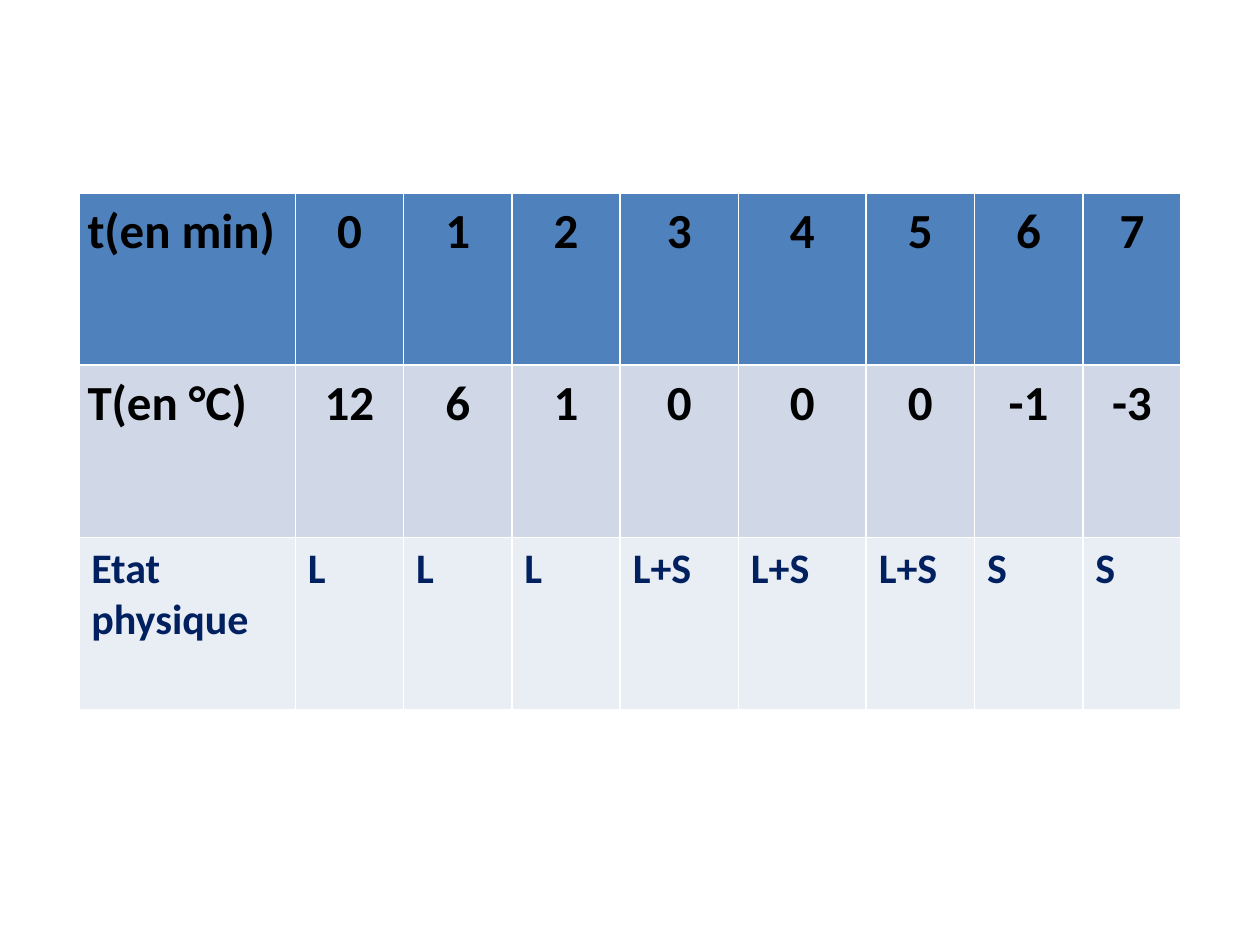
"""Build a slide with a table of temperature and physical state over time."""
import pptx
import pptx.dml.color
import pptx.enum.text
import pptx.util

Pt = pptx.util.Pt
RGBColor = pptx.dml.color.RGBColor
PP_ALIGN = pptx.enum.text.PP_ALIGN

BLACK = RGBColor(0x00, 0x00, 0x00)
NAVY = RGBColor(0x00, 0x20, 0x60)
BLUE = RGBColor(0x4F, 0x81, 0xBD)
BLUE_GREY = RGBColor(0xD0, 0xD8, 0xE8)
PALE_GREY = RGBColor(0xE9, 0xED, 0xF4)

MEASURE = {"size": 28, "color": BLACK, "align": PP_ALIGN.CENTER,
           "spacing": 1.15, "margins": (5, 0)}
STATE = {"size": 24, "color": NAVY, "align": PP_ALIGN.LEFT,
         "spacing": 1.0, "margins": (7.2, 3.6)}
ROWS = [
    (["t(en min)", "0", "1", "2", "3", "4", "5", "6", "7"], BLUE, MEASURE),
    (["T(en °C)", "12", "6", "1", "0", "0", "0", "-1", "-3"], BLUE_GREY, MEASURE),
    (["Etat physique", "L", "L", "L", "L+S", "L+S", "L+S", "S", "S"], PALE_GREY, STATE),
]
COLUMN_WIDTHS = [123.75, 61.9, 61.9, 61.9, 67.5, 73.1, 61.9, 61.9, 56.2]
ROW_HEIGHT = 98.4
LEFT, TOP = 45, 110.25


def format_cell(cell, text, fill, style, align):
    cell.text = text
    cell.fill.solid()
    cell.fill.fore_color.rgb = fill
    side, edge = style["margins"]
    cell.margin_left = cell.margin_right = Pt(side)
    cell.margin_top = cell.margin_bottom = Pt(edge)
    p = cell.text_frame.paragraphs[0]
    p.alignment = align
    p.line_spacing = style["spacing"]
    p.font.name = "Calibri"
    p.font.size = Pt(style["size"])
    p.font.bold = True
    p.font.color.rgb = style["color"]


def main():
    prs = pptx.Presentation()
    prs.slide_width, prs.slide_height = Pt(720), Pt(540)
    s = prs.slides.add_slide(prs.slide_layouts[6])
    table = s.shapes.add_table(
        len(ROWS), len(COLUMN_WIDTHS), Pt(LEFT), Pt(TOP),
        Pt(sum(COLUMN_WIDTHS)), Pt(ROW_HEIGHT * len(ROWS))).table
    for column, width in zip(table.columns, COLUMN_WIDTHS):
        column.width = Pt(width)
    for row, (texts, fill, style) in zip(table.rows, ROWS):
        row.height = Pt(ROW_HEIGHT)
        for i, (cell, text) in enumerate(zip(row.cells, texts)):
            align = style["align"] if i else PP_ALIGN.LEFT
            format_cell(cell, text, fill, style, align)
    prs.save("out.pptx")


if __name__ == "__main__":
    main()
